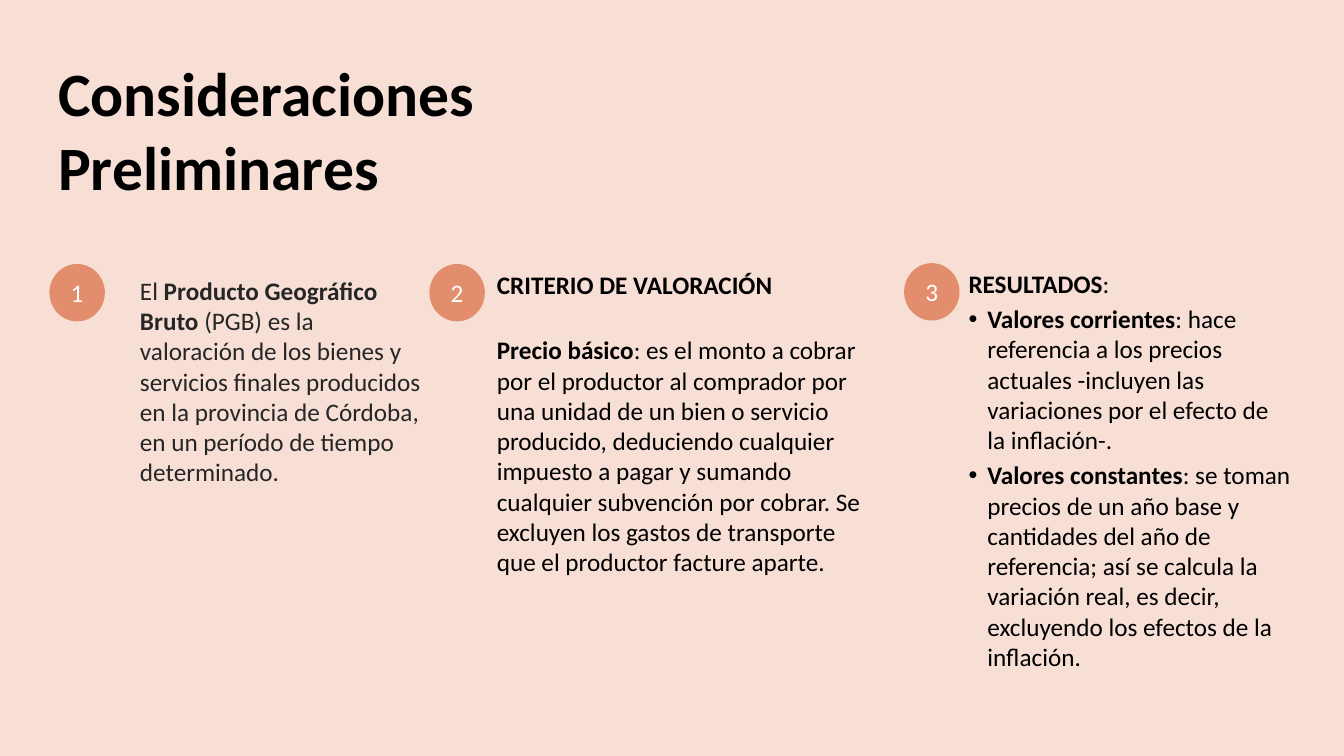
from pptx import Presentation
from pptx.dml.color import RGBColor
from pptx.enum.shapes import MSO_SHAPE
from pptx.enum.text import MSO_ANCHOR, PP_ALIGN
from pptx.util import Pt
from lxml.etree import SubElement
from pptx.oxml.ns import qn

FONT = "Calibri"
BLACK, GREY, WHITE = "000000", "262626", "FFFFFF"
PINK, CORAL = "F7DFD6", "E28E6C"
BODY, GAP, INDENT = 18, 3.6, 13.5

COLUMNS = [
    (35.3, 188.6, (57.6, 4.4, 215.3, 181.4), GREY, [
        (0, False, [
            ("El ", False),
            ("Producto Geográfico Bruto ", True),
            ("(PGB) es la valoración de los bienes y servicios finales "
             "producidos en la provincia de Córdoba, en un período de "
             "tiempo determinado.", False)])]),
    (306.7, 188.6, (41.1, 0, 277.2, 229.7), BLACK, [
        (0, False, [("CRITERIO DE VALORACIÓN", True)]),
        (25.4, False, [
            ("Precio básico", True),
            (": es el monto a cobrar por el productor al comprador por una "
             "unidad de un bien o servicio producido, deduciendo cualquier "
             "impuesto a pagar y sumando cualquier subvención por cobrar. "
             "Se excluyen los gastos de transporte que el productor facture "
             "aparte.", False)])]),
    (645.8, 188, (38.9, 0, 244.1, 319), BLACK, [
        (GAP, False, [("RESULTADOS", True), (":", False)]),
        (GAP, True, [
            ("Valores corrientes", True),
            (": hace referencia a los precios actuales -incluyen las "
             "variaciones por el efecto de la inflación-.", False)]),
        (GAP, True, [
            ("Valores constantes", True),
            (": se toman precios de un año base y cantidades del año de "
             "referencia; así se calcula la variación real, es decir, "
             "excluyendo los efectos de la inflación.", False)])]),
]


def paint(fill, color):
    fill.solid()
    fill.fore_color.rgb = RGBColor.from_string(color)


def add_run(para, text, size, color, bold=False):
    run = para.add_run()
    run.text = text
    run.font.name = FONT
    run.font.size = Pt(size)
    run.font.bold = bold
    paint(run.font.fill, color)


def add_bullet(para):
    props = para._p.get_or_add_pPr()
    props.set("marL", str(Pt(INDENT)))
    props.set("indent", str(-Pt(INDENT)))
    SubElement(props, qn("a:buFont"), typeface="Arial")
    SubElement(props, qn("a:buChar"), char="•")


def add_text(slide, box, paras, size, color):
    frame = slide.shapes.add_textbox(*map(Pt, box)).text_frame
    frame.word_wrap = True
    for i, (space, bullet, runs) in enumerate(paras):
        para = frame.add_paragraph() if i else frame.paragraphs[0]
        para.space_before = Pt(space)
        if bullet:
            add_bullet(para)
        for text, bold in runs:
            add_run(para, text, size, color, bold)


def add_badge(slide, left, top, label):
    badge = slide.shapes.add_shape(
        MSO_SHAPE.OVAL, Pt(left), Pt(top), Pt(39.6), Pt(41))
    badge.shadow.inherit = False
    paint(badge.fill, CORAL)
    badge.line.fill.background()
    frame = badge.text_frame
    frame.vertical_anchor = MSO_ANCHOR.MIDDLE
    para = frame.paragraphs[0]
    para.alignment = PP_ALIGN.CENTER
    add_run(para, label, BODY, WHITE)


def add_column(slide, label, left, top, box, color, paras):
    add_badge(slide, left, top, label)
    dx, dy, width, height = box
    add_text(slide, (left + dx, top + dy, width, height), paras, BODY, color)


def main():
    deck = Presentation()
    deck.slide_width, deck.slide_height = Pt(960), Pt(540)
    slide = deck.slides.add_slide(deck.slide_layouts[6])
    paint(slide.background.fill, PINK)
    title = [(0, False, [("Consideraciones Preliminares", True)])]
    add_text(slide, (34.5, 36, 335.5, 182), title, 44, BLACK)
    for i, column in enumerate(COLUMNS, 1):
        add_column(slide, str(i), *column)
    deck.save("out.pptx")


if __name__ == "__main__":
    main()
